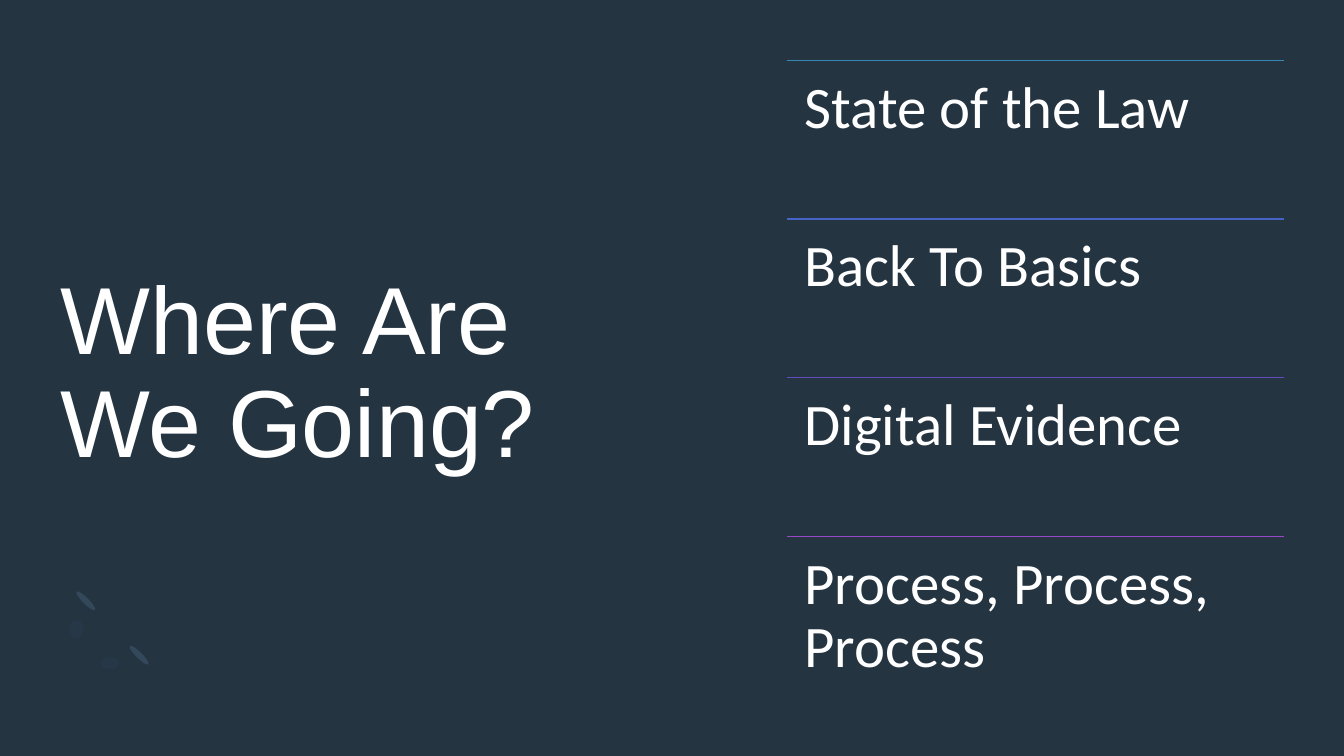
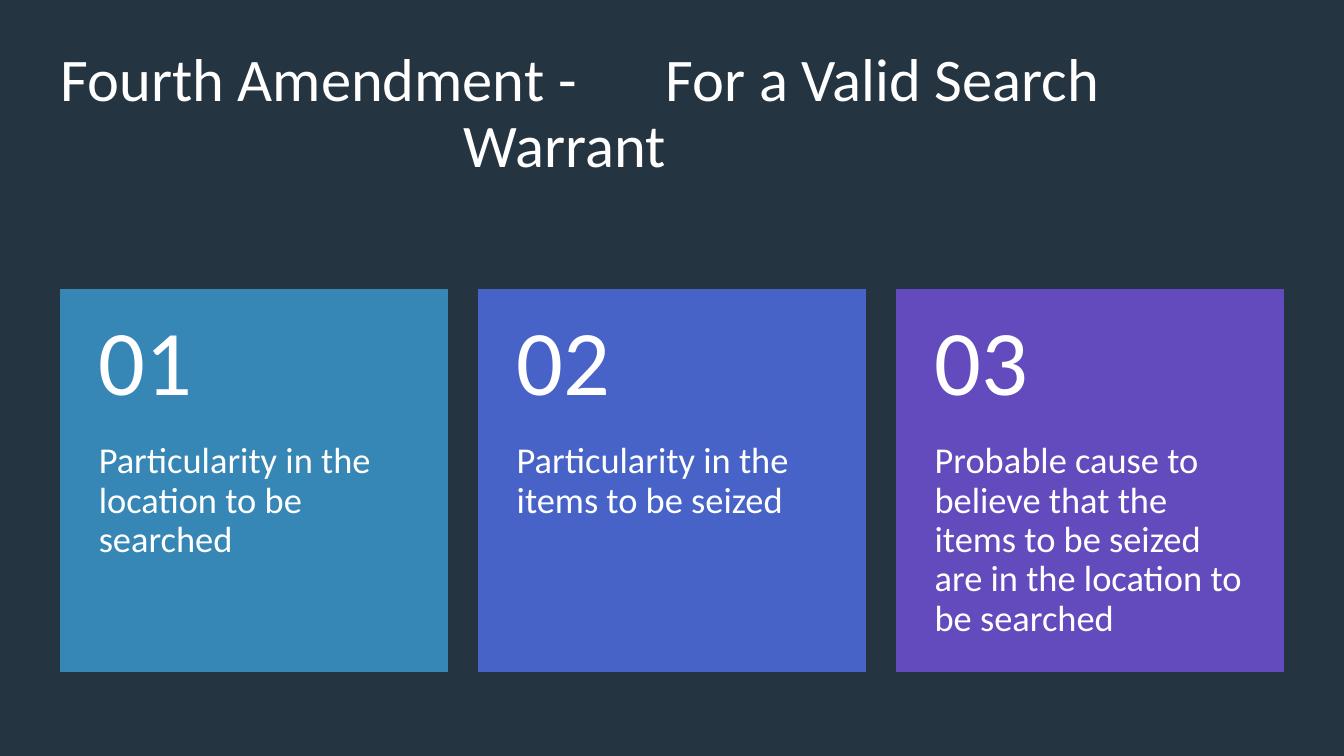
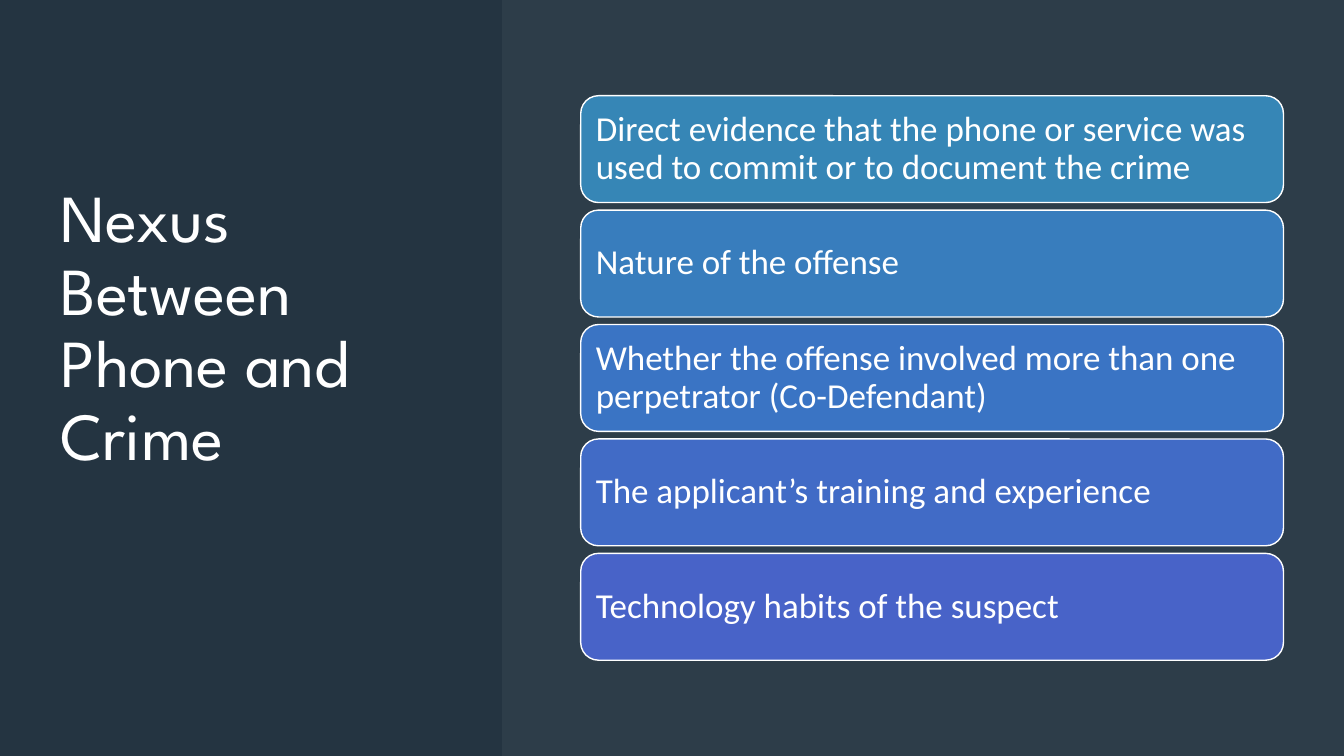
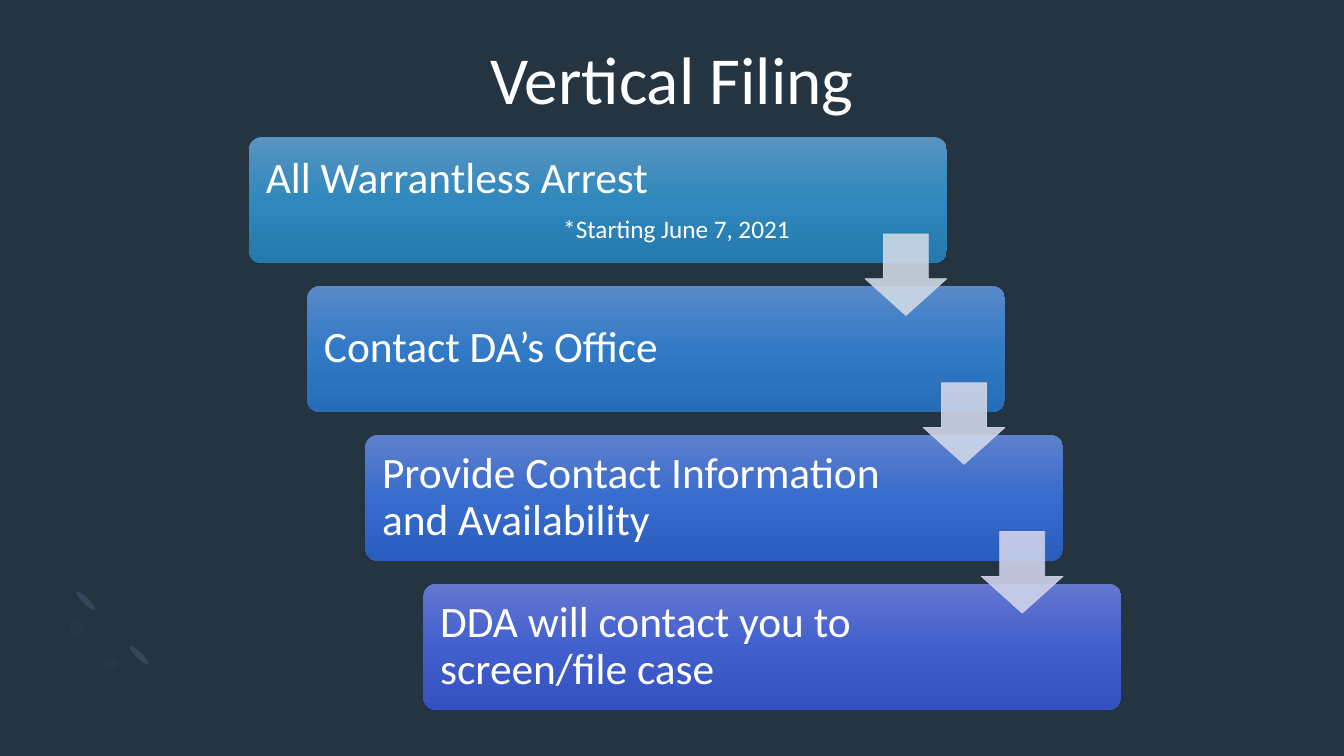
from copy import deepcopy

from lxml import etree
from pptx import Presentation
from pptx.dml.color import RGBColor
from pptx.enum import shapes, text
from pptx.oxml import ns
from pptx.util import Inches, Pt

COLORS = {
    "background": "243441", "white": "FFFFFF", "mist": "E5EBF0",
    "spark": "33495B", "smudge": "263847",
    "teal": "3686B6", "azure": "387DBD", "blue": "3A74C4", "cobalt": "416BC6",
    "indigo": "4863C8", "violet": "634BBE", "purple": "9848C8",
}
SHAPE, ALIGN, ANCHOR = shapes.MSO_SHAPE, text.PP_ALIGN, text.MSO_ANCHOR
MARGIN, CONTENT_WIDTH = 0.6, 12.13


def write(shape, words, size, insets=(0, 0, 0, 0), anchor=ANCHOR.MIDDLE,
          align=ALIGN.LEFT, font="Calibri"):
    """Put white text in a shape; insets run left, top, right, bottom in inches."""
    frame = shape.text_frame
    frame.word_wrap = True
    frame.auto_size = text.MSO_AUTO_SIZE.NONE
    frame.vertical_anchor = anchor
    (frame.margin_left, frame.margin_top,
     frame.margin_right, frame.margin_bottom) = map(Inches, insets)
    frame.text = words
    for paragraph in frame.paragraphs:
        paragraph.alignment = align
        paragraph.line_spacing = 0.9
        paragraph.font.name = font
        paragraph.font.size = Pt(size)
        paragraph.font.color.rgb = RGBColor.from_string(COLORS["white"])


def add_filled(slide, kind, box, color, line=None, line_width=1, opacity=100):
    """Add a flat shape with its box in inches and its opacity in percent."""
    shape = slide.shapes.add_shape(kind, *map(Inches, box))
    shape.shadow.inherit = False
    shape.fill.solid()
    shape.fill.fore_color.rgb = RGBColor.from_string(color)
    if line:
        shape.line.color.rgb = RGBColor.from_string(line)
        shape.line.width = Pt(line_width)
    else:
        shape.line.fill.background()
    if opacity < 100:
        for tint in shape._element.spPr.iter(ns.qn("a:srgbClr")):
            etree.SubElement(tint, ns.qn("a:alpha"), val=str(opacity * 1000))
    return shape


prs = Presentation()
prs.slide_width, prs.slide_height = Inches(13.33), Inches(7.5)
backdrop = prs.slide_master.background.fill
backdrop.solid()
backdrop.fore_color.rgb = RGBColor.from_string(COLORS["background"])

# Slides and titles: words, box, size, font, alignment, anchor
TITLES = [
    ("Where Are We Going?", (MARGIN, 1.66, 6.06, 4.13), 68, "Arial", ALIGN.LEFT, ANCHOR.MIDDLE),
    ("Fourth Amendment -\tFor a Valid Search\v\tWarrant", (MARGIN, 0.6, CONTENT_WIDTH, 1.08),
     43.2, "Calibri", ALIGN.LEFT, ANCHOR.MIDDLE),
    ("Nexus Between Phone and Crime", (MARGIN, 0.6, 3.9, 5.34), 48, "League Spartan",
     ALIGN.LEFT, ANCHOR.MIDDLE),
    ("Vertical Filing", (MARGIN, 0.46, CONTENT_WIDTH, 1.46), 48, "Calibri",
     ALIGN.CENTER, ANCHOR.TOP),
]
for words, box, size, font, align, anchor in TITLES:
    title = prs.slides.add_slide(prs.slide_layouts[5]).shapes.title
    title.left, title.top, title.width, title.height = map(Inches, box)
    write(title, words, size, anchor=anchor, align=align, font=font)
agenda, warrant, nexus, filing = prs.slides

# Corner ornament
for slide in (agenda, filing):
    for left, top, width, height, color in [
        (1.35, 6.37, 0.06, 0.26, "spark"), (0.82, 5.83, 0.06, 0.26, "spark"),
        (0.69, 6.15, 0.14, 0.18, "smudge"), (1.0, 6.52, 0.18, 0.12, "smudge"),
    ]:
        mark = add_filled(slide, SHAPE.OVAL, (left, top, width, height), COLORS[color])
        mark.rotation = 135 if color == "spark" else 0

# Slide 1: agenda topics under rules
TOPICS = [("State of the Law", "teal"), ("Back To Basics", "indigo"),
          ("Digital Evidence", "violet"), ("Process, Process, Process", "purple")]
topic_left, topic_width, topic_height = 7.81, 4.92, 1.57
for i, (words, color) in enumerate(TOPICS):
    top = 0.6 + i * 4.72 / 3
    rule = agenda.shapes.add_connector(
        shapes.MSO_CONNECTOR.STRAIGHT, Inches(topic_left), Inches(top),
        Inches(topic_left + topic_width), Inches(top))
    rule.line.color.rgb = RGBColor.from_string(COLORS[color])
    rule.line.width = Pt(1)
    etree.SubElement(rule._element.spPr, ns.qn("a:effectLst"))
    topic = agenda.shapes.add_textbox(
        *map(Inches, (topic_left, top, topic_width, topic_height)))
    write(topic, words, 42, (0.17,) * 4, ANCHOR.TOP)

# Slide 2: title tab stops, then numbered requirement cards
heading = warrant.shapes.title.text_frame.paragraphs[0]._p.get_or_add_pPr()
tab_list = etree.Element(ns.qn("a:tabLst"))
for stop in (4, 6):
    etree.SubElement(tab_list, ns.qn("a:tab"), pos=str(Inches(stop)), algn="l")
heading.find(ns.qn("a:defRPr")).addprevious(tab_list)

REQUIREMENTS = [
    ("Particularity in the location to be searched", "teal"),
    ("Particularity in the items to be seized", "indigo"),
    ("Probable cause to believe that the items to be seized are in the location to be searched",
     "violet"),
]
card_top, card_width, card_height, number_height = 2.87, 3.84, 3.79, 1.52
card_step = (CONTENT_WIDTH - card_width) / 2
for i, (words, color) in enumerate(REQUIREMENTS):
    left = MARGIN + i * card_step
    card = add_filled(warrant, SHAPE.RECTANGLE, (left, card_top, card_width, card_height),
                      COLORS[color], COLORS[color])
    write(card, words, 26, (0.38, number_height, 0.38, 0.36), ANCHOR.TOP)
    number = warrant.shapes.add_textbox(
        *map(Inches, (left, card_top, card_width, number_height)))
    write(number, f"{i + 1:02}", 66, (0.38, 0.18, 0.38, 0.18))

# Slide 3: stacked factors on a lighter panel
FACTORS = [
    ("Direct evidence that the phone or service was used to commit or to document the crime", "teal"),
    ("Nature of the offense", "azure"),
    ("Whether the offense involved more than one perpetrator (Co-Defendant)", "blue"),
    ("The applicant’s training and experience", "cobalt"),
    ("Technology habits of the suspect", "indigo"),
]
add_filled(nexus, SHAPE.RECTANGLE, (4.98, 0, 8.35, 7.5), COLORS["mist"], opacity=5)
for i, (words, color) in enumerate(FACTORS):
    factor = add_filled(nexus, SHAPE.ROUNDED_RECTANGLE, (5.76, 0.95 + i * 4.54 / 4, 6.97, 1.06),
                        COLORS[color], COLORS["white"])
    write(factor, words, 25, (0.1,) * 4)

# Slide 4: descending steps, each with top, middle and bottom gradient colours
STEPS = [
    ("All Warrantless Arrest\n*Starting June 7, 2021", ("5894C1", "3088BC", "257AAD")),
    ("Contact DA’s Office", ("5989C9", "327AC6", "276CB6")),
    ("Provide Contact Information and Availability", ("5E7FCC", "386CCC", "2A5DBD")),
    ("DDA will contact you to screen/file case", ("6477CF", "425FCE", "3351BF")),
]
ARROW_COLORS = ["CED9E5", "CFD6E8", "D0D3EB"]
step_width, arrow_size = 6.92, 0.81
corners = [(2.47 + i * 1.73 / 3, 1.36 + i * 4.43 / 3) for i in range(len(STEPS))]
for (left, top), (words, shades) in zip(corners, STEPS):
    step = add_filled(filing, SHAPE.ROUNDED_RECTANGLE, (left, top, step_width, 1.25), shades[1])
    step.adjustments[0] = 0.1
    step.fill.gradient()
    step.fill.gradient_angle = 270
    first_stop = step._element.spPr.find(".//" + ns.qn("a:gs"))
    first_stop.addnext(deepcopy(first_stop))
    for stop, position, shade in zip(step.fill.gradient_stops, (0, 0.5, 1), shades):
        stop.position = position
        stop.color.rgb = RGBColor.from_string(shade)
    write(step, words, 31, (0.13, 0.13, 1.52, 0.13))
    for note in step.text_frame.paragraphs[1:]:
        note.alignment = ALIGN.RIGHT
        note.space_before = Pt(10)
        note.font.size = Pt(18)

for (left, top), color in zip(corners, ARROW_COLORS):
    arrow = add_filled(filing, SHAPE.DOWN_ARROW,
                       (left + step_width - arrow_size, top + 0.96, arrow_size, arrow_size),
                       color, color, line_width=0.5, opacity=90)
    arrow.adjustments[0], arrow.adjustments[1] = 0.55, 0.45

prs.save("out.pptx")
